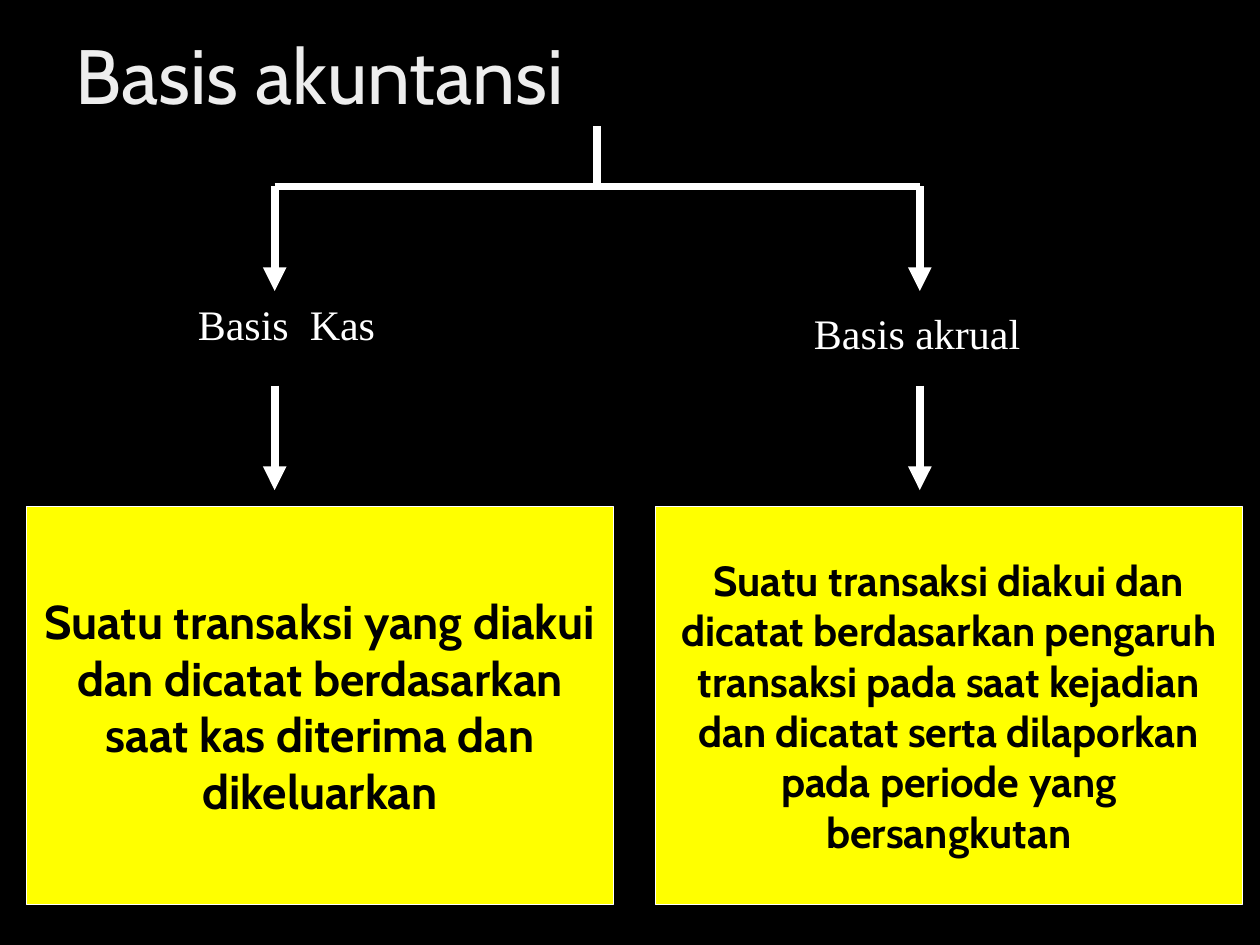
import pptx
import pptx.util
import pptx.dml.color
import pptx.enum.shapes
import pptx.enum.text
import pptx.oxml.ns
import lxml.etree

Inches = pptx.util.Inches
Pt = pptx.util.Pt
ALIGN = pptx.enum.text.PP_ALIGN
ANCHOR = pptx.enum.text.MSO_ANCHOR

HUES = {"back": "000000", "title": "EDEDED", "line": "FFFFFF",
        "box": "FFFF00", "ink": "000000"}


def hue(name):
    return pptx.dml.color.RGBColor.from_string(HUES[name])


def write(shape, text, font="Cabin", size=24, color="line", bold=False,
          align=ALIGN.LEFT, anchor=ANCHOR.TOP, wrap=True, space=1.0,
          pad=(0.08, 0.04)):
    frame = shape.text_frame
    frame.word_wrap = wrap
    frame.vertical_anchor = anchor
    frame.margin_left = frame.margin_right = Inches(pad[0])
    frame.margin_top = frame.margin_bottom = Inches(pad[1])
    para = frame.paragraphs[0]
    para.alignment = align
    para.line_spacing = space
    run = para.add_run()
    run.text = text
    run.font.name = font
    run.font.size = Pt(size)
    run.font.bold = bold
    run.font.color.rgb = hue(color)


class Deck:
    def __init__(self, wide, high):
        self.show = pptx.Presentation()
        self.show.slide_width = Inches(wide)
        self.show.slide_height = Inches(high)
        self.slide = self.show.slides.add_slide(self.show.slide_layouts[6])
        fill = self.slide.background.fill
        fill.solid()
        fill.fore_color.rgb = hue("back")

    def label(self, text, *area, **style):
        box = self.slide.shapes.add_textbox(*map(Inches, area))
        write(box, text, **style)

    def panel(self, text, *area, **style):
        box = self.slide.shapes.add_shape(
            pptx.enum.shapes.MSO_SHAPE.RECTANGLE, *map(Inches, area))
        box.shadow.inherit = False
        box.fill.solid()
        box.fill.fore_color.rgb = hue("box")
        box.line.color.rgb = hue("line")
        box.line.width = Pt(0.75)
        write(box, text, color="ink", bold=True, align=ALIGN.CENTER,
              anchor=ANCHOR.MIDDLE, **style)

    def line(self, *ends, arrow=False):
        link = self.slide.shapes.add_connector(
            pptx.enum.shapes.MSO_CONNECTOR.STRAIGHT, *map(Inches, ends))
        link.line.color.rgb = hue("line")
        link.line.width = Pt(4.5)
        qn = pptx.oxml.ns.qn
        if arrow:
            lxml.etree.SubElement(link.line._get_or_add_ln(),
                                  qn("a:tailEnd"), type="triangle")
        lxml.etree.SubElement(link._element.spPr, qn("a:effectLst"))


def main():
    deck = Deck(10, 7.5)

    # Title
    deck.label("Basis akuntansi", 0.5, 0.18, 9, 0.91, size=44, color="title",
               anchor=ANCHOR.MIDDLE, space=0.9, pad=(0.1, 0.05))

    # Stem of the tree
    mid, bar = 4.74, 1.48
    deck.line(mid, 1, mid, bar)

    # Branches with their arrows
    drop = 0.83
    for x in (2.18, 7.3):
        deck.line(min(x, mid), bar, max(x, mid), bar)
        for top in (bar, 3.06):
            deck.line(x, top, x, top + drop, arrow=True)

    # Names of the two bases
    serif = {"font": "Times New Roman", "wrap": False}
    deck.label("Basis  Kas", 1.49, 2.33, 1.59, 0.49, **serif)
    deck.label("Basis akrual", 6.38, 2.4, 1.82, 0.49, **serif)

    # Definitions
    notes = (
        (0.21, 27, "Suatu transaksi yang diakui dan dicatat berdasarkan "
                   "saat kas diterima dan dikeluarkan"),
        (5.2, 24, "Suatu transaksi diakui dan dicatat berdasarkan pengaruh "
                  "transaksi pada saat kejadian dan dicatat serta dilaporkan "
                  "pada periode yang bersangkutan"),
    )
    for left, size, text in notes:
        deck.panel(text, left, 4.02, 4.66, 3.16, size=size)

    deck.show.save("out.pptx")


if __name__ == "__main__":
    main()
